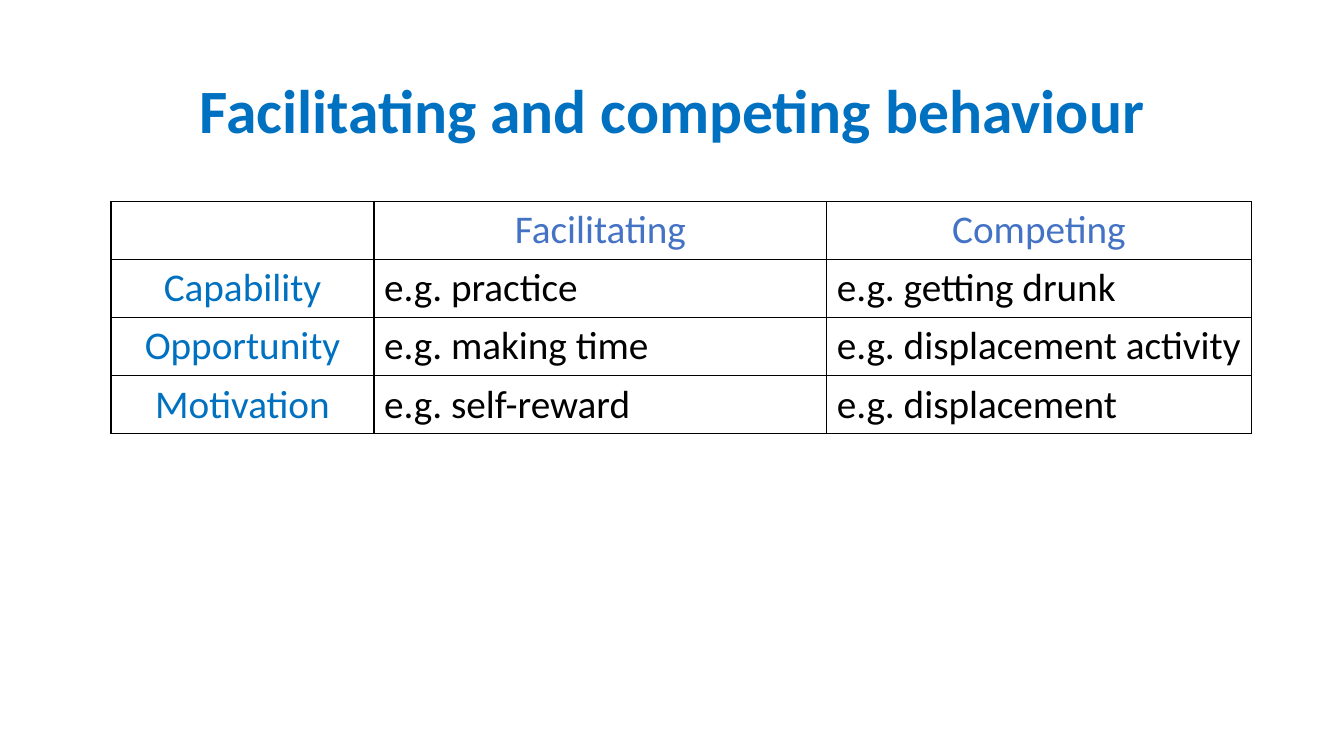
from lxml import etree
from pptx import Presentation
from pptx.dml.color import RGBColor
from pptx.enum.text import MSO_ANCHOR, PP_ALIGN
from pptx.oxml.ns import qn
from pptx.util import Pt

PX = 9144
FONT = "Calibri"
LEFT, CENTER = PP_ALIGN.LEFT, PP_ALIGN.CENTER
MIDDLE = MSO_ANCHOR.MIDDLE
HUES = {"title": "0070C0", "head": "4472C4", "text": "000000",
        "line": "000000", "back": "FFFFFF"}
COLS = (261, 449, 421)
ROWS = (
    ("", "Facilitating", "Competing"),
    ("Capability", "e.g. practice", "e.g. getting drunk"),
    ("Opportunity", "e.g. making time", "e.g. displacement activity"),
    ("Motivation", "e.g. self-reward", "e.g. displacement"),
)


def px(size):
    """Turn px into EMU."""
    return size * PX


def style(para, size, hue, align, bold=False):
    """Format one paragraph."""
    para.alignment = align
    font = para.font
    font.name, font.size, font.bold = FONT, Pt(size), bold
    font.color.rgb = RGBColor.from_string(HUES[hue])


def border(cell):
    """Draw thin lines on all four sides of a cell."""
    props = cell._tc.get_or_add_tcPr()
    for side in ("a:lnL", "a:lnR", "a:lnT", "a:lnB"):
        line = etree.SubElement(props, qn(side), w=str(Pt(1)))
        fill = etree.SubElement(line, qn("a:solidFill"))
        etree.SubElement(fill, qn("a:srgbClr"), val=HUES["line"])


def add_title(slide, text, left, top, width, height):
    """Place the slide title in its box."""
    title = slide.shapes.title
    title.left, title.top = px(left), px(top)
    title.width, title.height = px(width), px(height)
    frame = title.text_frame
    frame.text = text
    frame.vertical_anchor = MIDDLE
    para = frame.paragraphs[0]
    para.line_spacing = 0.9
    style(para, 44, "title", CENTER, True)


def add_grid(slide, left, top, height):
    """Place the table of behaviours in its box."""
    shape = slide.shapes.add_table(len(ROWS), len(COLS), px(left), px(top),
                                   px(sum(COLS)), px(height))
    table = shape.table
    table.first_row = table.horz_banding = False
    for col, width in zip(table.columns, COLS):
        col.width = px(width)
    for y, row in enumerate(ROWS):
        for x, text in enumerate(row):
            cell = table.cell(y, x)
            border(cell)
            cell.fill.solid()
            cell.fill.fore_color.rgb = RGBColor.from_string(HUES["back"])
            cell.text = text
            hue = "head" if y == 0 else "title" if x == 0 else "text"
            align = LEFT if hue == "text" else CENTER
            if align == LEFT:
                cell.margin_right = px(5)
            style(cell.text_frame.paragraphs[0], 28, hue, align)


def main():
    """Build the deck and save it."""
    deck = Presentation()
    deck.slide_width, deck.slide_height = px(1333), px(750)
    slide = deck.slides.add_slide(deck.slide_layouts[5])
    add_title(slide, "Facilitating and competing behaviour", 92, 40, 1150, 145)
    add_grid(slide, 110, 200, 228)
    deck.save("out.pptx")


if __name__ == "__main__":
    main()
